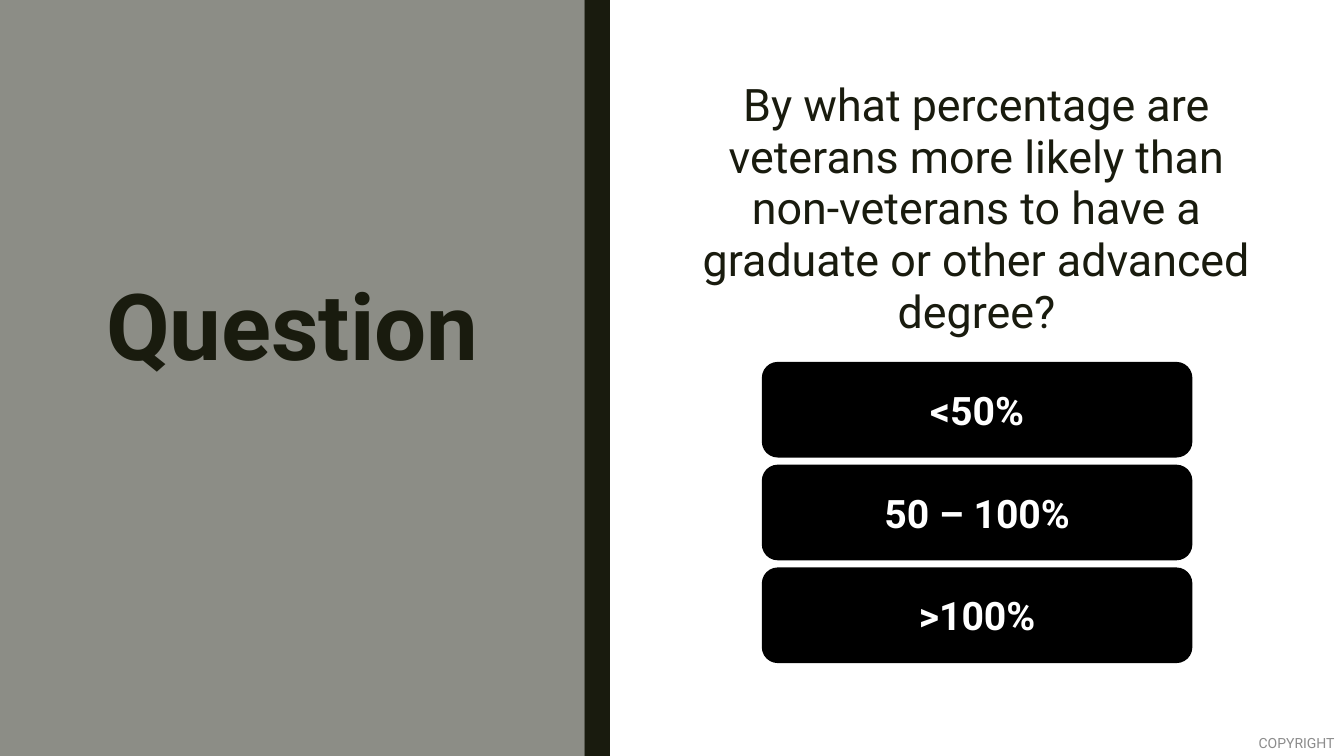
import pptx
import pptx.dml.color
import pptx.enum.shapes
import pptx.enum.text
import pptx.util

Cm = pptx.util.Cm
ALIGN = pptx.enum.text.PP_ALIGN
ANCHOR = pptx.enum.text.MSO_ANCHOR
SHAPE = pptx.enum.shapes.MSO_SHAPE

INK = "191B0E"


def color(code):
    return pptx.dml.color.RGBColor.from_string(code)


class QuizPage:
    """Style and current slide of the quiz."""

    font_name = "Roboto"

    def __init__(self, deck):
        self.page = deck.slides.add_slide(deck.slide_layouts[6])

    def set_text(self, box, text, size, ink, bold=False, align=ALIGN.CENTER,
                 anchor=ANCHOR.MIDDLE, line_spacing=1.0):
        frame = box.text_frame
        frame.word_wrap = True
        frame.vertical_anchor = anchor
        frame.text = text
        para = frame.paragraphs[0]
        para.alignment = align
        para.line_spacing = line_spacing
        font = para.runs[0].font
        font.name = self.font_name
        font.size = pptx.util.Pt(size)
        font.bold = bold
        font.color.rgb = color(ink)

    def block(self, left, top, width, height, fill, kind=SHAPE.RECTANGLE):
        box = self.page.shapes.add_shape(kind, left, top, width, height)
        box.shadow.inherit = False
        box.fill.solid()
        box.fill.fore_color.rgb = color(fill)
        box.line.fill.background()
        return box

    def label(self, left, top, width, height, text, size, ink, **style):
        box = self.page.shapes.add_textbox(left, top, width, height)
        self.set_text(box, text, size, ink, **style)

    def answer(self, left, top, width, height, text):
        box = self.block(left, top, width, height, "000000", SHAPE.ROUNDED_RECTANGLE)
        self.set_text(box, text, 28, "FFFFFF", bold=True)


def main():
    deck = pptx.Presentation()
    deck.slide_width = Cm(33.87)
    deck.slide_height = Cm(19.05)
    quiz = QuizPage(deck)

    # Left panel with its dark edge
    quiz.block(0, 0, Cm(14.73), deck.slide_height, "8C8D86")
    quiz.block(Cm(14.73), 0, Cm(0.64), deck.slide_height, INK)
    quiz.label(Cm(2.01), Cm(5.38), Cm(10.72), Cm(5.99), "Question", 66, INK,
               bold=True, line_spacing=0.84)

    # Question text
    quiz.label(Cm(17.37), Cm(1.9), Cm(14.48), Cm(4.62),
               "By what percentage are veterans more likely than non-veterans "
               "to have a graduate or other advanced degree?",
               32, INK, anchor=ANCHOR.TOP, line_spacing=0.96)

    # Answer choices
    for row, choice in enumerate(["<50%", "50 – 100%", ">100%"]):
        quiz.answer(Cm(19.2), Cm(9.12 + 2.59 * row), Cm(10.85), Cm(2.41), choice)

    # Footer
    quiz.label(Cm(31.06), Cm(18.16), Cm(2.82), Cm(1.12), "COPYRIGHT", 10, "8C8C8C",
               align=ALIGN.RIGHT)

    deck.save("out.pptx")


if __name__ == "__main__":
    main()
